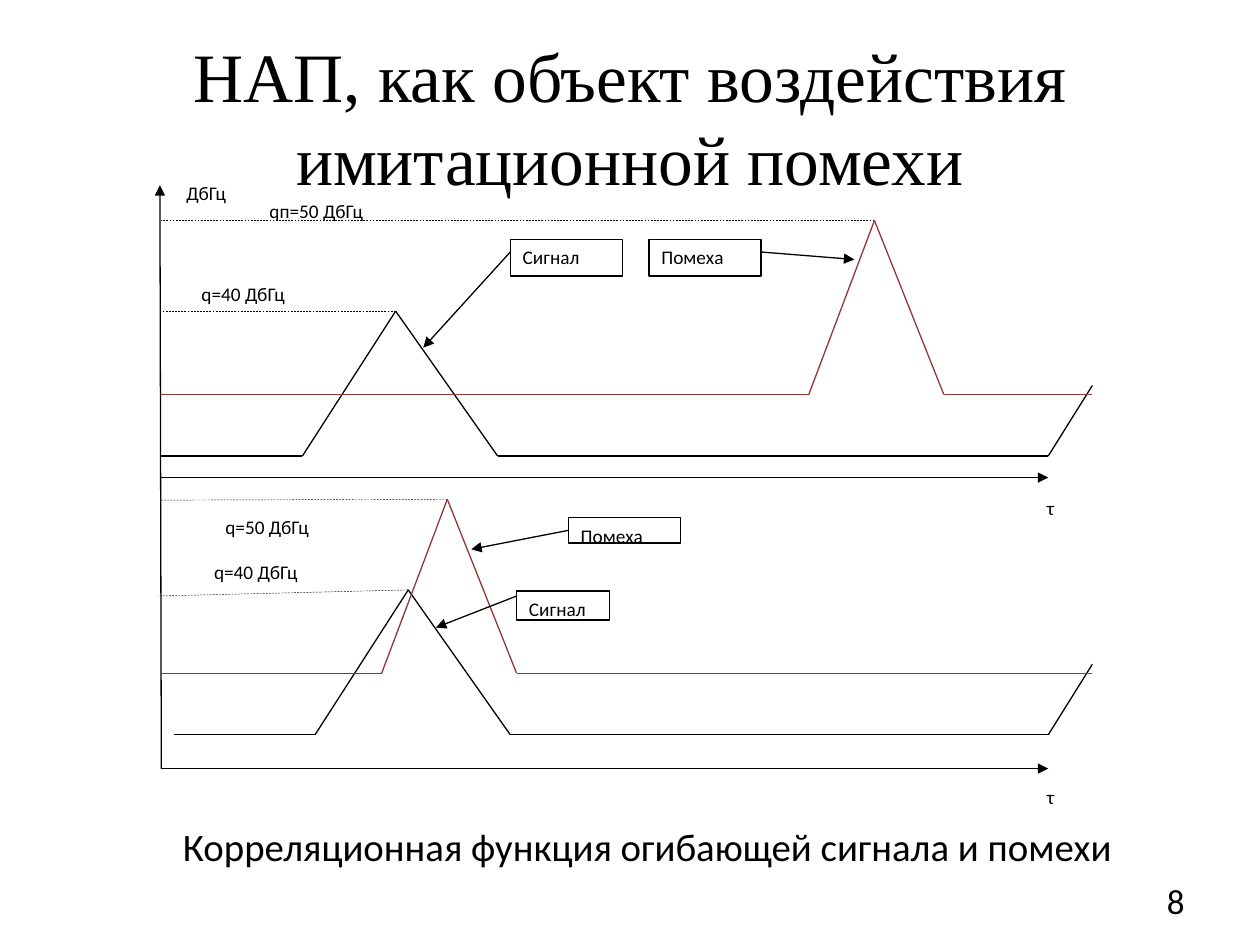
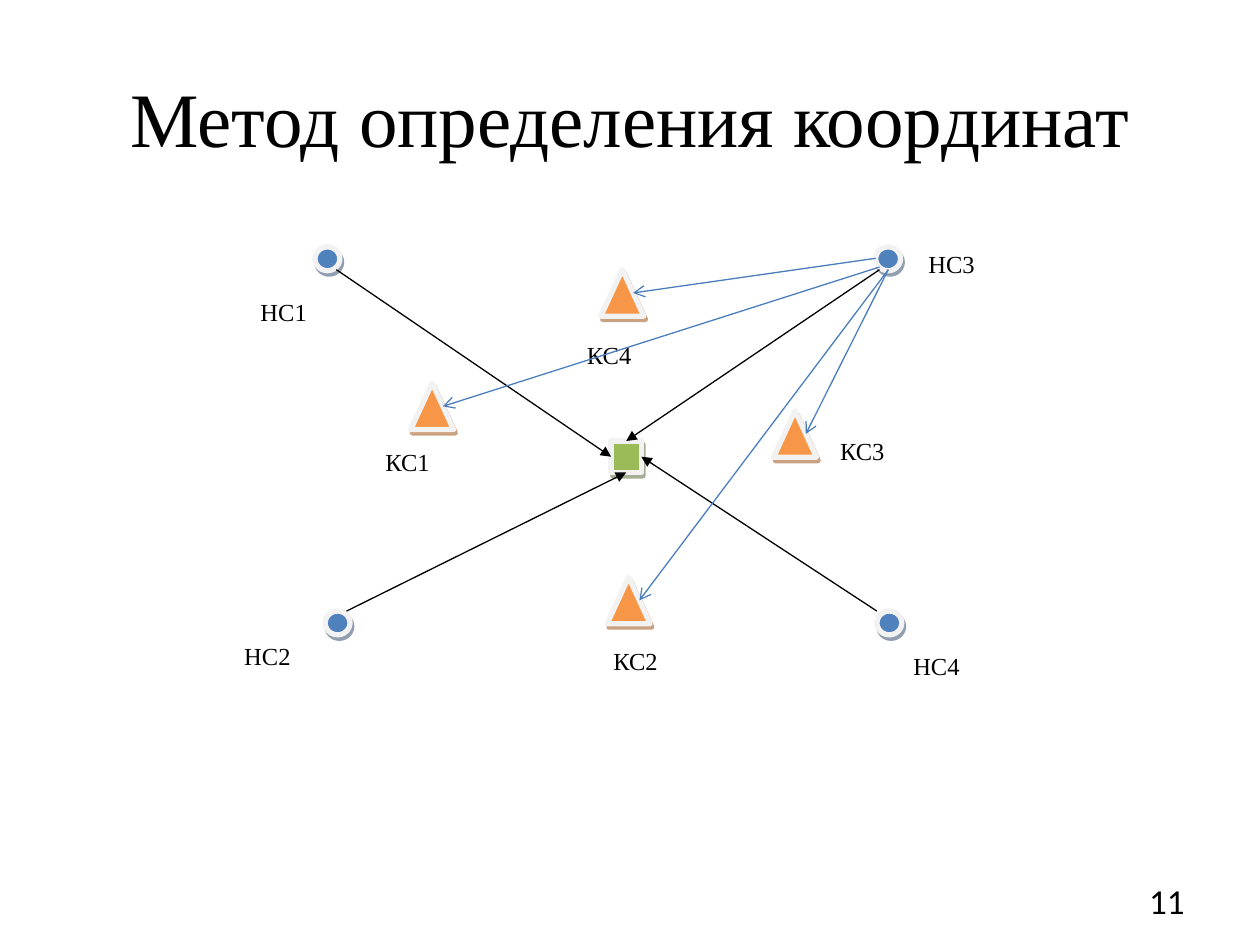
from dataclasses import dataclass
from typing import Any, NamedTuple, Optional

import lxml.etree
import pptx
import pptx.dml.color
import pptx.enum.dml
import pptx.enum.shapes
import pptx.enum.text
import pptx.oxml.ns
import pptx.util

Pt = pptx.util.Pt
qn = pptx.oxml.ns.qn
MSO_SHAPE = pptx.enum.shapes.MSO_SHAPE
ALIGN = pptx.enum.text.PP_ALIGN
ANCHOR = pptx.enum.text.MSO_ANCHOR
Point = tuple[float, float]


@dataclass(frozen=True)
class Theme:
    ink: str = "000000"
    paper: str = "FFFFFF"
    jam: str = "943634"
    link: str = "4B7EBC"
    rim: str = "F2F2F2"
    serif: str = "Times New Roman"
    sans: str = "Calibri"
    title: float = 44
    long_title: float = 39.6
    caption: float = 22.2
    number: float = 20
    node_label: float = 14
    plot_label: float = 11
    thin: float = 0.75
    hair: float = 0.25
    thick: float = 3


THEME = Theme()


class Box(NamedTuple):
    x: float
    y: float
    w: float
    h: float


class Label(NamedTuple):
    text: str
    box: Box
    border: str = THEME.paper


@dataclass(frozen=True)
class Stroke:
    color: str = THEME.ink
    width: float = THEME.thin
    dashed: bool = False
    tail: str = ""


@dataclass(frozen=True)
class Kind:
    shape: Any
    fill: str
    shadow: str
    w: float
    h: float


@dataclass(frozen=True)
class Panel:
    dy: float
    time_y: float
    signal_start: float
    signal_peak: float
    jam_peak: float
    signal_level_end: Point
    jam_level_end: Point


class Callout(NamedTuple):
    label: Label
    start: Point
    end: Point
    joined: bool = False


AXIS_X, SIGNAL_END, PLOT_END = 92.2, 599, 624.2
SIGNAL_BASE, SIGNAL_TOP, SIGNAL_RISE = 260.6, 177.8, 220.3
JAM_BASE, JAM_TOP = 225.4, 126
ARROW = Stroke(tail="triangle")
LEVEL = Stroke(width=THEME.hair, dashed=True)
LINK = Stroke(THEME.link, tail="arrow")

PANELS = [
    Panel(0, 272.9, 92.2, 226.1, 499.7, (92.2, 177.8), (92.2, 126)),
    Panel(159.3, 439.2, 99.4, 233.3, 255.6, (90, 340.6), (91.4, 285.8)),
]
PLOT_LABELS = [
    Label("ДбГц", Box(99.4, 100.1, 57.6, 15.8)),
    Label("qп=50 ДбГц", Box(146.9, 110.2, 95, 15.8)),
    Label("q=40 ДбГц", Box(108, 157.7, 80.6, 15.8)),
    Label("q=50 ДбГц", Box(121.7, 290.9, 80.6, 15.8)),
    Label("q=40 ДбГц", Box(115.2, 316.8, 80.6, 15.8)),
    Label("τ", Box(591.1, 280.1, 25.9, 15.8)),
    Label("τ", Box(591.1, 445, 25.9, 15.8)),
]
CALLOUTS = [
    Callout(Label("Сигнал", Box(291.6, 136.8, 64.1, 20.9), THEME.ink), (291.6, 144), (241.9, 198.7)),
    Callout(Label("Помеха", Box(370.8, 136.8, 64.1, 20.9), THEME.ink), (434.9, 144), (488.2, 148.3)),
    Callout(Label("Помеха", Box(324.7, 295.9, 64.1, 14.4), THEME.ink), (324.7, 303.1), (269.3, 313.9), True),
    Callout(Label("Сигнал", Box(295.2, 337.7, 53.3, 16.6), THEME.ink), (295.2, 340.6), (249.1, 358.6)),
]

RECEIVER = Kind(MSO_SHAPE.RECTANGLE, "9BBB59", "4E6128", 17.3, 18)
SATELLITE = Kind(MSO_SHAPE.OVAL, "4F81BD", "243F60", 14.2, 13.6)
STATION = Kind(MSO_SHAPE.ISOSCELES_TRIANGLE, "F79646", "974706", 24.5, 26.6)
RECEIVER_AT = (349.2, 252)
SATELLITES = [(180, 141.1), (185.8, 349.2), (500.4, 141.1), (501.1, 349.2)]
STATIONS = [(234.7, 218.9), (347, 329.8), (442.1, 234.7), (343.4, 154.1)]
SIGNAL_PATHS = [((192.2, 154.1), 1), ((198, 349.2), 2), ((502.6, 154.1), 0), ((501.1, 349.2), 3)]
LINK_STARTS = [(502.6, 152.6), (507.6, 154.1), (507.6, 154.1), (500.4, 147.6)]
NODE_LABELS = [
    Label("НС1", Box(141.8, 166.3, 50.4, 25.2)),
    Label("НС2", Box(132.5, 362.9, 53.3, 25.2)),
    Label("НС3", Box(523.4, 139, 58.3, 25.2)),
    Label("НС4", Box(514.8, 368.6, 53.3, 25.2)),
    Label("КС1", Box(213.1, 252, 50.4, 25.2)),
    Label("КС2", Box(343.4, 365.8, 50.4, 25.2)),
    Label("КС3", Box(473, 245.5, 50.4, 25.2)),
    Label("КС4", Box(328.3, 190.8, 50.4, 25.2)),
]


def rgb(value: str) -> pptx.dml.color.RGBColor:
    return pptx.dml.color.RGBColor.from_string(value)


def apply(target: Any, formats: dict[str, Any]) -> None:
    for name, value in formats.items():
        setattr(target, name, value)


def write(sp: Any, text: str, font: str, size: float, align: Any = ALIGN.LEFT, anchor: Any = ANCHOR.TOP) -> Any:
    tf = sp.text_frame
    apply(tf, {"word_wrap": True, "vertical_anchor": anchor})
    p = tf.paragraphs[0]
    p.alignment = align
    r = p.add_run()
    apply(r, {"text": text})
    apply(r.font, {"name": font, "size": Pt(size)})
    r.font.color.rgb = rgb(THEME.ink)
    return p


def add_text(s: Any, box: Box, *args: Any) -> Any:
    return write(s.shapes.add_textbox(*map(Pt, box)), *args)


def add_shape(s: Any, kind: Any, box: Box, fill: str, border: str, width: float) -> Any:
    sp = s.shapes.add_shape(kind, *map(Pt, box))
    sp.shadow.inherit = False
    sp.fill.solid()
    sp.fill.fore_color.rgb = rgb(fill)
    sp.line.color.rgb = rgb(border)
    sp.line.width = Pt(width)
    return sp


def add_label(s: Any, label: Label, font: str, size: float) -> Any:
    sp = add_shape(s, MSO_SHAPE.RECTANGLE, label.box, THEME.paper, label.border, THEME.thin)
    write(sp, label.text, font, size)
    return sp


def add_node(s: Any, kind: Kind, at: Point) -> Any:
    sp = add_shape(s, kind.shape, Box(*at, kind.w, kind.h), kind.fill, THEME.rim, THEME.thick)
    effects = sp._element.spPr.find(qn("a:effectLst"))
    shadow = lxml.etree.SubElement(
        effects, qn("a:outerShdw"), {"dist": str(int(Pt(2.2))), "dir": "3780000", "algn": "ctr", "rotWithShape": "0"}
    )
    color = lxml.etree.SubElement(shadow, qn("a:srgbClr"), {"val": kind.shadow})
    lxml.etree.SubElement(color, qn("a:alpha"), {"val": "50000"})
    return sp


def add_line(s: Any, start: Point, end: Point, stroke: Stroke = Stroke()) -> Any:
    c = s.shapes.add_connector(pptx.enum.shapes.MSO_CONNECTOR.STRAIGHT, *map(Pt, start + end))
    c.line.color.rgb = rgb(stroke.color)
    c.line.width = Pt(stroke.width)
    if stroke.dashed:
        c.line.dash_style = pptx.enum.dml.MSO_LINE.DASH
    sp_pr = c._element.spPr
    if stroke.tail:
        lxml.etree.SubElement(sp_pr.find(qn("a:ln")), qn("a:tailEnd"), {"type": stroke.tail})
    lxml.etree.SubElement(sp_pr, qn("a:effectLst"))
    return c


def add_curve(s: Any, points: list[Point], stroke: Stroke = Stroke()) -> None:
    for start, end in zip(points, points[1:]):
        add_line(s, start, end, stroke)


def add_panel(s: Any, panel: Panel) -> None:
    base, top = SIGNAL_BASE + panel.dy, SIGNAL_TOP + panel.dy
    jam_base, jam_top = JAM_BASE + panel.dy, JAM_TOP + panel.dy
    peak, jam_peak = panel.signal_peak, panel.jam_peak
    add_line(s, (AXIS_X, panel.time_y), (SIGNAL_END, panel.time_y), ARROW)
    add_line(s, (peak, top), panel.signal_level_end, LEVEL)
    add_line(s, (jam_peak, jam_top), panel.jam_level_end, LEVEL)
    add_curve(s, [
        (panel.signal_start, base), (peak - 53.3, base), (peak, top), (peak + 58.3, base),
        (SIGNAL_END, base), (PLOT_END, SIGNAL_RISE + panel.dy),
    ])
    add_curve(s, [
        (AXIS_X, jam_base), (jam_peak - 37.5, jam_base), (jam_peak, jam_top),
        (jam_peak + 39.6, jam_base), (PLOT_END, jam_base),
    ], Stroke(THEME.jam))


def add_slide(prs: Any, title: str, size: float, number: int) -> Any:
    s = prs.slides.add_slide(prs.slide_layouts[6])
    add_text(s, Box(36, 21.6, 648, 90), title, THEME.serif, size, ALIGN.CENTER, ANCHOR.MIDDLE)
    add_text(s, Box(516.2, 500.4, 167.8, 28.8), str(number), THEME.sans, THEME.number, ALIGN.RIGHT, ANCHOR.MIDDLE)
    return s


def build_correlation(prs: Any) -> None:
    s = add_slide(prs, "НАП, как объект воздействия имитационной помехи", THEME.long_title, 8)
    for label in PLOT_LABELS:
        add_label(s, label, THEME.sans, THEME.plot_label)
    add_line(s, (AXIS_X, PANELS[-1].time_y), (91.4, 105.8), ARROW)
    for panel in PANELS:
        add_panel(s, panel)
    for callout in CALLOUTS:
        sp = add_label(s, callout.label, THEME.sans, THEME.plot_label)
        c = add_line(s, callout.start, callout.end, ARROW)
        if callout.joined:
            c.begin_connect(sp, 1)
    p = add_text(s, Box(28.1, 466.6, 648, 31), "Корреляционная функция огибающей сигнала и помехи",
                 THEME.sans, THEME.caption, ALIGN.CENTER)
    for name, value in {"marL": 63.4, "indent": -27.4}.items():
        p._p.get_or_add_pPr().set(name, str(int(Pt(value))))


def build_positioning(prs: Any) -> None:
    s = add_slide(prs, "Метод определения координат", THEME.title, 11)
    for label in NODE_LABELS:
        add_label(s, label, THEME.serif, THEME.node_label)
    receiver = add_node(s, RECEIVER, RECEIVER_AT)
    for kind, places in ((SATELLITE, SATELLITES), (STATION, STATIONS)):
        for at in places:
            add_node(s, kind, at)
    for start, side in SIGNAL_PATHS:
        add_line(s, start, RECEIVER_AT, ARROW).end_connect(receiver, side)
    for start, (x, y) in zip((LINK_STARTS[i] for i in range(4)), STATIONS):
        add_line(s, start, (x + STATION.w * 0.75, y + STATION.h / 2), LINK)


def main() -> None:
    prs = pptx.Presentation()
    apply(prs, {"slide_width": Pt(720), "slide_height": Pt(540)})
    build_correlation(prs)
    build_positioning(prs)
    prs.save("out.pptx")


if __name__ == "__main__":
    main()
